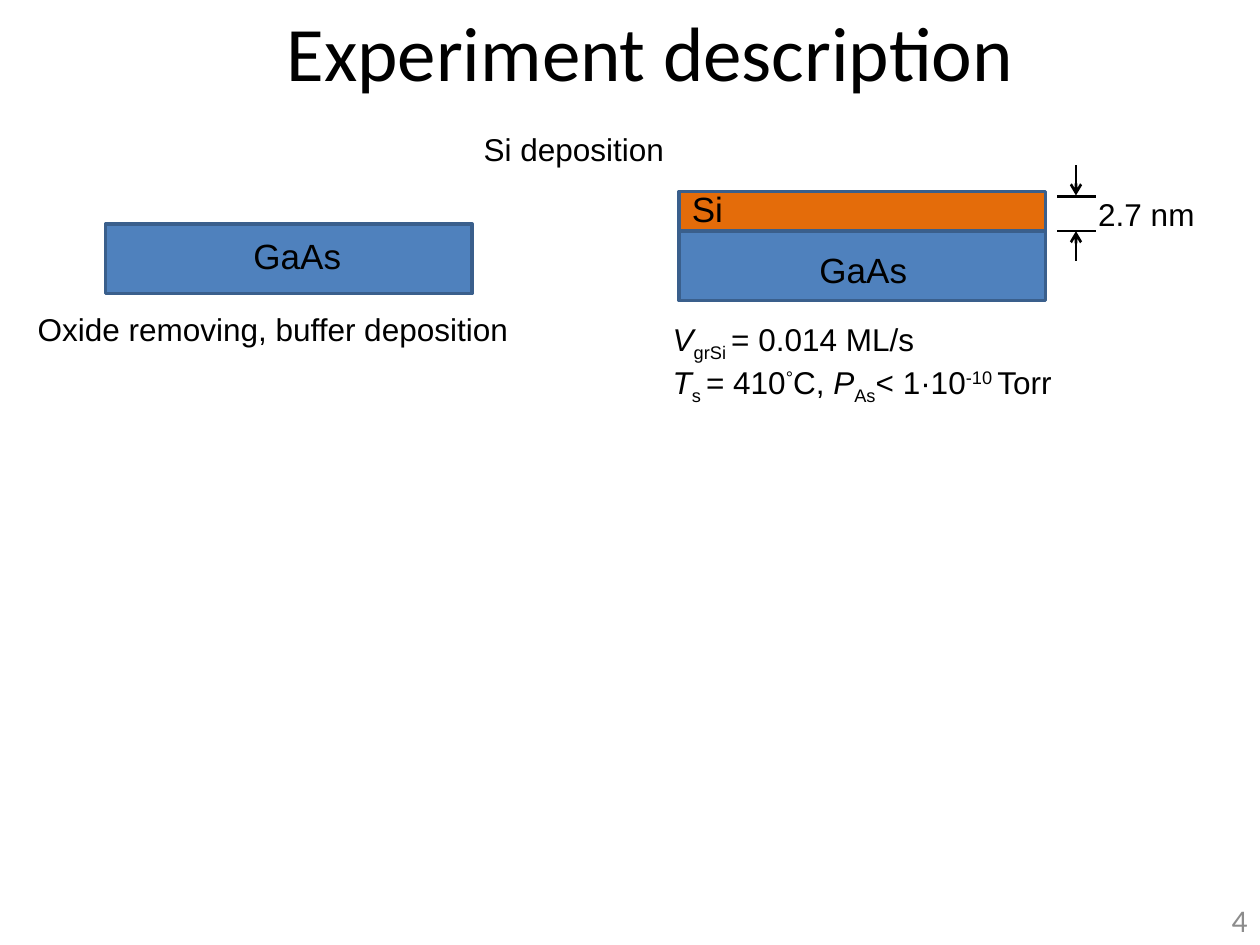
from dataclasses import dataclass

import pptx
import pptx.dml.color
import pptx.enum.shapes
import pptx.enum.text
import pptx.oxml.ns
import pptx.util
from lxml import etree

Cm = pptx.util.Cm
Pt = pptx.util.Pt
Align = pptx.enum.text.PP_ALIGN
Anchor = pptx.enum.text.MSO_ANCHOR

BLACK = "000000"
GREY = "8C8C8C"
GAAS_BLUE = "4F81BD"
SILICON_ORANGE = "E46C0A"
OUTLINE_BLUE = "3A5F8C"

LAYER_WIDTH = 7.39
GAAS_HEIGHT = 1.4
SILICON_HEIGHT = 0.8
SAMPLE_LEFT = 13.69
SILICON_TOP = 3.86
INTERFACE = SILICON_TOP + SILICON_HEIGHT


@dataclass
class Layer:
    left: float
    top: float
    height: float
    fill: str


@dataclass
class Run:
    text: str
    italic: bool = False
    baseline: int = 0


@dataclass
class Label:
    left: float
    top: float
    width: float
    height: float
    paragraphs: list[list[Run]]
    size: float = 18
    font: str = "Arial"
    color: str = BLACK
    align: Align = Align.JUSTIFY
    anchor: Anchor = Anchor.TOP
    wrap: bool = True


@dataclass
class Line:
    start: tuple[float, float]
    end: tuple[float, float]
    arrow: bool = False


def rgb(color: str) -> pptx.dml.color.RGBColor:
    return pptx.dml.color.RGBColor.from_string(color)


def write_text(paragraph, text: str, *, size: float, font: str, color: str,
               italic: bool = False, baseline: int = 0) -> None:
    run = paragraph.add_run()
    run.text = text
    run.font.size = Pt(size)
    run.font.name = font
    run.font.color.rgb = rgb(color)
    run.font.italic = italic
    if baseline:
        run._r.get_or_add_rPr().set("baseline", str(baseline * 1000))


def draw_layer(slide, layer: Layer) -> None:
    shape = slide.shapes.add_shape(
        pptx.enum.shapes.MSO_SHAPE.RECTANGLE,
        Cm(layer.left), Cm(layer.top), Cm(LAYER_WIDTH), Cm(layer.height))
    shape.shadow.inherit = False
    shape.fill.solid()
    shape.fill.fore_color.rgb = rgb(layer.fill)
    shape.line.color.rgb = rgb(OUTLINE_BLUE)
    shape.line.width = Pt(2)


def draw_label(slide, label: Label) -> None:
    shape = slide.shapes.add_textbox(
        Cm(label.left), Cm(label.top), Cm(label.width), Cm(label.height))
    frame = shape.text_frame
    frame.word_wrap = label.wrap
    frame.vertical_anchor = label.anchor
    for index, runs in enumerate(label.paragraphs):
        paragraph = frame.add_paragraph() if index else frame.paragraphs[0]
        paragraph.alignment = label.align
        for run in runs:
            write_text(paragraph, run.text, size=label.size, font=label.font,
                       color=label.color, italic=run.italic, baseline=run.baseline)


def draw_line(slide, line: Line) -> None:
    connector = slide.shapes.add_connector(
        pptx.enum.shapes.MSO_CONNECTOR.STRAIGHT,
        *(Cm(value) for value in line.start + line.end))
    connector.line.color.rgb = rgb(BLACK)
    connector.line.width = Pt(1.5)
    qualified = pptx.oxml.ns.qn
    if line.arrow:
        etree.SubElement(connector.line._get_or_add_ln(), qualified("a:tailEnd"), type="arrow")
    etree.SubElement(connector._element.spPr, qualified("a:effectLst"))


def layer_label(text: str, left: float, top: float, width: float) -> Label:
    return Label(left, top, width, 1.12, [[Run(text)]], size=20,
                 align=Align.CENTER, wrap=False)


LAYERS = [
    Layer(2.13, 4.52, GAAS_HEIGHT, GAAS_BLUE),
    Layer(SAMPLE_LEFT, SILICON_TOP, SILICON_HEIGHT, SILICON_ORANGE),
    Layer(SAMPLE_LEFT, INTERFACE, GAAS_HEIGHT, GAAS_BLUE),
]

LINES = [
    Line((21.69, 3.33), (21.69, 3.94), arrow=True),
    Line((21.69, 5.26), (21.69, INTERFACE), arrow=True),
    Line((21.31, 3.96), (22.1, 3.96)),
    Line((21.31, INTERFACE), (22.1, INTERFACE)),
]

GROWTH_CONDITIONS = [
    [Run("V", italic=True), Run("grSi ", baseline=-25), Run("= 0.014 ML/s")],
    [Run("T", italic=True), Run("s ", baseline=-25), Run("= 410"),
     Run("°", baseline=30), Run("С, "), Run("P", italic=True),
     Run("As", baseline=-25), Run("< 1·10"), Run("-10 ", baseline=30), Run("Torr")],
]

LABELS = [
    layer_label("GaAs", 4.85, 4.6, 2.29),
    layer_label("Si", SAMPLE_LEFT, 3.66, 1.14),
    layer_label("GaAs", 16.26, 4.88, 2.29),
    Label(9.5, 2.49, 4.19, 1.02, [[Run("Si deposition")]]),
    Label(21.89, 3.81, 2.79, 1.02, [[Run("2.7 nm")]]),
    Label(0.51, 6.12, 10.01, 1.02, [[Run("Oxide removing, buffer deposition")]]),
    Label(13.31, 6.32, 8.99, 1.8, GROWTH_CONDITIONS),
    Label(19.48, 18.03, 5.92, 1.02, [[Run("4")]], font="Calibri", color=GREY,
          align=Align.RIGHT, anchor=Anchor.MIDDLE),
    Label(5.31, 0.13, 15.6, 1.8, [[Run("Experiment description")]], size=44,
          font="Calibri", align=Align.CENTER, anchor=Anchor.MIDDLE),
]


def main() -> None:
    presentation = pptx.Presentation()
    presentation.slide_width = Cm(25.4)
    presentation.slide_height = Cm(19.05)
    slide = presentation.slides.add_slide(presentation.slide_layouts[6])
    for layer in LAYERS:
        draw_layer(slide, layer)
    for line in LINES:
        draw_line(slide, line)
    for label in LABELS:
        draw_label(slide, label)
    presentation.save("out.pptx")


if __name__ == "__main__":
    main()
